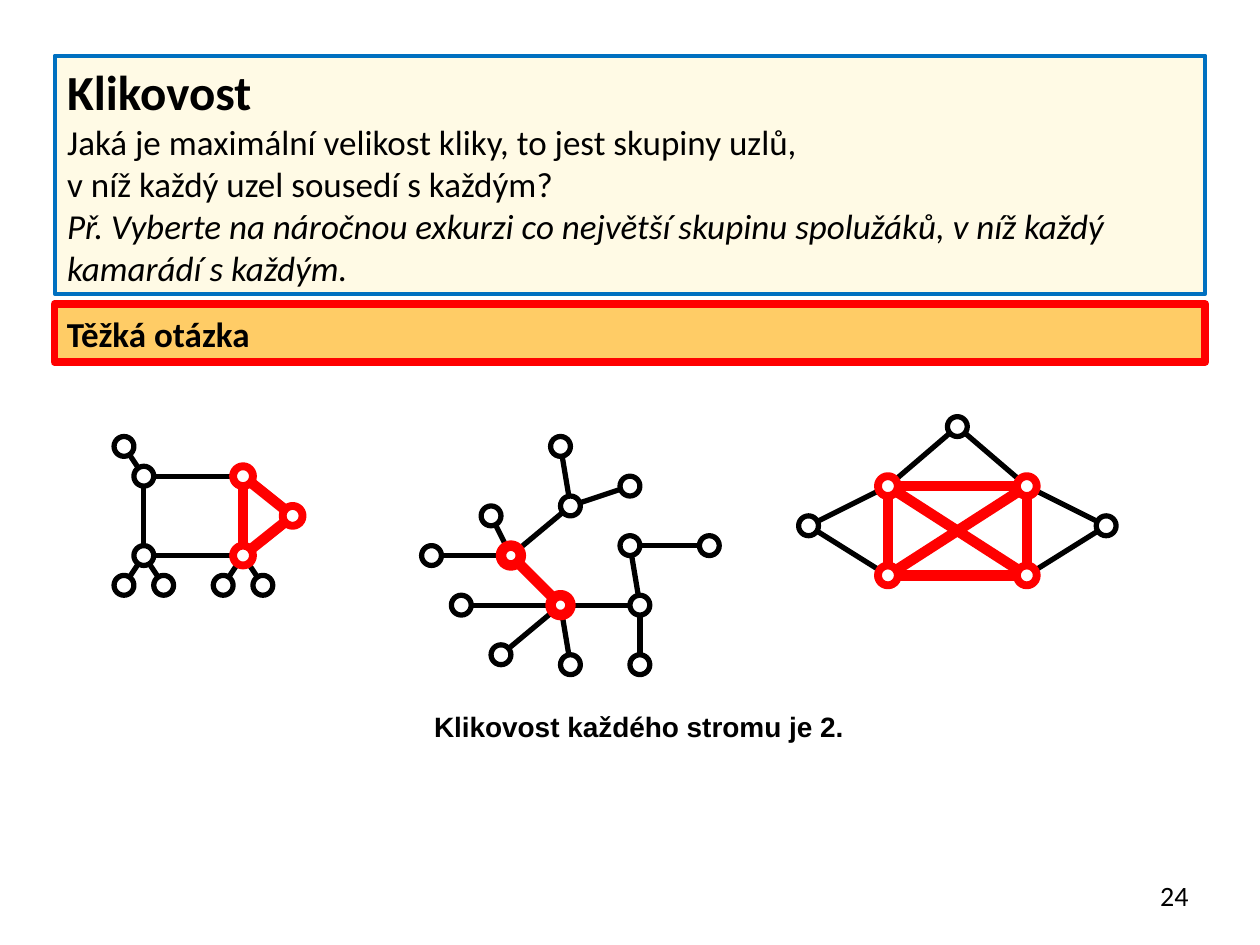
from pptx import Presentation
from pptx import util as u
from pptx.dml.color import RGBColor
from pptx.enum import shapes, text
from pptx.oxml.ns import qn
from lxml import etree

BLACK = RGBColor(0x00, 0x00, 0x00)
WHITE = RGBColor(0xFF, 0xFF, 0xFF)
RED = RGBColor(0xFF, 0x00, 0x00)
BLUE = RGBColor(0x00, 0x70, 0xC0)
CREAM = RGBColor(0xFF, 0xFA, 0xE5)
AMBER = RGBColor(0xFF, 0xCC, 0x66)

DEFINITION = [
    ("Klikovost", {"size": u.Pt(28), "bold": True}),
    ("Jaká je maximální velikost kliky, to jest skupiny uzlů,", {}),
    ("v níž každý uzel sousedí s každým?", {}),
    ("Př. Vyberte na náročnou exkurzi co největší skupinu spolužáků, v níž každý",
     {"italic": True}),
    ("kamarádí s každým.", {"italic": True}),
]

HOUSE = {
    "nodes": {"a": (2.5, 9), "b": (2.9, 9.6), "c": (4.9, 9.6), "d": (5.9, 10.4),
              "e": (4.9, 11.2), "f": (2.9, 11.2), "g": (2.5, 11.8),
              "h": (3.3, 11.8), "i": (4.5, 11.8), "j": (5.3, 11.8)},
    "edges": "ab bc bf fe fg fh ei ej cd de ce",
    "clique": "cde",
    "ring": 4.5,
}
HEXAGON = {
    "nodes": {"a": (19.3, 8.6), "b": (17.9, 9.8), "c": (20.7, 9.8),
              "d": (16.3, 10.6), "e": (22.3, 10.6), "f": (17.9, 11.6),
              "g": (20.7, 11.6)},
    "edges": "ab ac bd df ce eg bc bf bg cf cg fg",
    "clique": "bcfg",
    "ring": 4.5,
}
TREE = {
    "nodes": {"a": (11.3, 9), "b": (11.5, 10.2), "c": (12.7, 9.8),
              "d": (9.9, 10.4), "e": (10.3, 11.2), "f": (8.7, 11.2),
              "g": (9.3, 12.2), "h": (11.3, 12.2), "i": (10.1, 13.2),
              "j": (11.5, 13.4), "k": (12.9, 12.2), "l": (12.7, 11),
              "m": (14.3, 11), "n": (12.9, 13.4)},
    "edges": "ab bc be de ef gh hi hj hk kl lm kn eh",
    "clique": "eh",
    "ring": 6,
}


class Deck:
    """Hold the text style and the current slide, and draw its elements."""

    def __init__(self, s):
        self.s = s
        self.style = {"name": "Calibri", "size": u.Pt(20), "bold": False, "italic": False}
        self.node_size = 0.4

    def place(self, sp, x, y, w, h):
        for key, value in {"left": x, "top": y, "width": w, "height": h}.items():
            setattr(sp, key, u.Cm(value))

    def paint(self, sp, fill, line, width):
        sp.fill.solid()
        sp.fill.fore_color.rgb = fill
        sp.line.color.rgb = line
        sp.line.width = u.Pt(width)

    def set_text(self, sp, lines, align=text.PP_ALIGN.LEFT):
        tf = sp.text_frame
        frame = {"word_wrap": True, "auto_size": text.MSO_AUTO_SIZE.NONE,
                 "vertical_anchor": text.MSO_ANCHOR.MIDDLE}
        for key, value in frame.items():
            setattr(tf, key, value)
        for i, (words, changes) in enumerate(lines):
            p = tf.add_paragraph() if i else tf.paragraphs[0]
            p.alignment = align
            r = p.add_run()
            r.text = words
            for key, value in {**self.style, **changes}.items():
                setattr(r.font, key, value)
            r.font.color.rgb = BLACK

    def title(self, box, lines, fill, line, width):
        sp = self.s.shapes.title
        self.place(sp, *box)
        self.paint(sp, fill, line, width)
        self.set_text(sp, lines)

    def shape(self, kind, box, fill, line, width):
        sp = self.s.shapes.add_shape(kind, *map(u.Cm, box))
        sp.shadow.inherit = False
        self.paint(sp, fill, line, width)
        return sp

    def banner(self, box, lines, fill, line, width):
        sp = self.shape(shapes.MSO_SHAPE.RECTANGLE, box, fill, line, width)
        self.set_text(sp, lines)

    def label(self, box, words, align=text.PP_ALIGN.LEFT, **changes):
        sp = self.s.shapes.add_textbox(*map(u.Cm, box))
        self.set_text(sp, [(words, changes)], align)

    def edge(self, start, end, color, width):
        sp = self.s.shapes.add_connector(
            shapes.MSO_CONNECTOR.STRAIGHT, *map(u.Cm, start + end))
        sp.line.color.rgb = color
        sp.line.width = u.Pt(width)
        etree.SubElement(sp._element.spPr, qn("a:effectLst"))

    def node(self, center, color, width):
        d = self.node_size
        x, y = center
        self.shape(shapes.MSO_SHAPE.OVAL, (x - d / 2, y - d / 2, d, d), WHITE, color, width)

    def graph(self, nodes, edges, clique, ring):
        for start, end in edges.split():
            inside = start in clique and end in clique
            self.edge(nodes[start], nodes[end], *((RED, 6) if inside else (BLACK, 3)))
        for name, center in nodes.items():
            self.node(center, *((RED, ring) if name in clique else (BLACK, 3)))


def main():
    prs = Presentation()
    prs.slide_width, prs.slide_height = u.Cm(25.4), u.Cm(19.05)
    deck = Deck(prs.slides.add_slide(prs.slide_layouts[5]))
    deck.title((1.1, 1.12, 23.2, 4.8), DEFINITION, CREAM, BLUE, 2.25)
    deck.banner((1.1, 6.13, 23.2, 1.17), [("Těžká otázka", {"bold": True})], AMBER, RED, 4.5)
    deck.label((18.29, 17.53, 5.92, 1.02), "24", text.PP_ALIGN.RIGHT, size=u.Pt(16))
    for graph in (HOUSE, HEXAGON, TREE):
        deck.graph(**graph)
    deck.label((8.5, 14.17, 8.9, 0.94), "Klikovost každého stromu je 2.",
               name="Arial", size=u.Pt(16), bold=True)
    prs.save("out.pptx")


if __name__ == "__main__":
    main()
